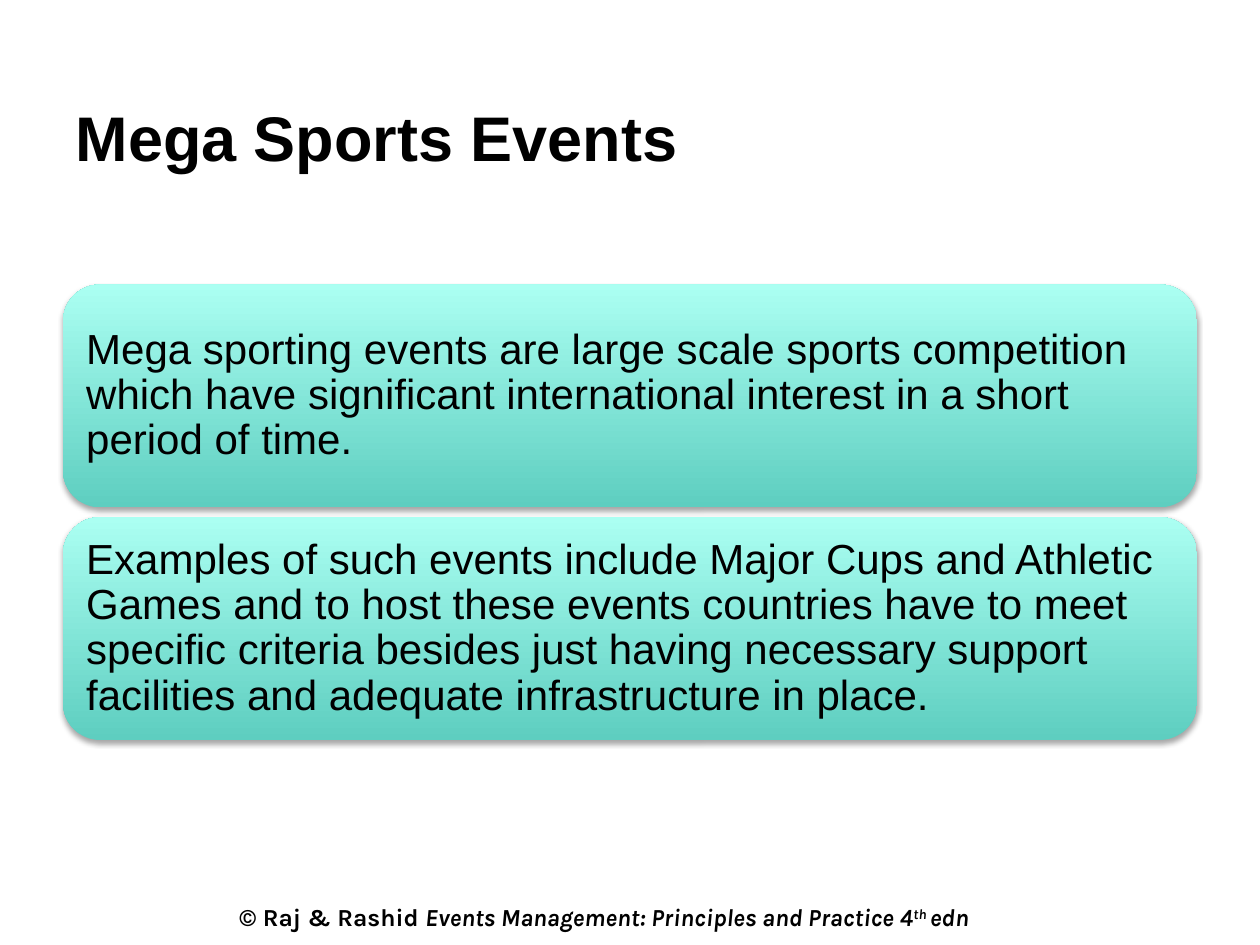
from dataclasses import dataclass

from lxml import etree
from pptx import Presentation
from pptx import util as u
from pptx.dml.color import RGBColor
from pptx.enum import shapes, text
from pptx.oxml.ns import qn

BLACK = RGBColor(0x00, 0x00, 0x00)
TEAL = RGBColor(0x5E, 0xCE, 0xC0)
PALE_TEAL = RGBColor(0xAB, 0xFF, 0xF2)

MARGIN = u.Pt(36)
CONTENT_WIDTH = u.Pt(648)
CARD_TOP = u.Pt(162.6)
CARD_HEIGHT = u.Pt(127.4)
CARD_PITCH = u.Pt(132.9)


@dataclass
class Span:
    words: str
    size: float
    font: str = "Arial"
    bold: bool = False
    italic: bool = False
    superscript: bool = False


def add_span(para, span: Span) -> None:
    run = para.add_run()
    run.text = span.words
    font = run.font
    font.name, font.size = span.font, u.Pt(span.size)
    font.bold, font.italic = span.bold, span.italic
    font.color.rgb = BLACK
    if span.superscript:
        run._r.get_or_add_rPr().set("baseline", "30000")


def add_soft_shadow(shape) -> None:
    shape.shadow.inherit = False
    effects = shape._element.spPr.find(qn("a:effectLst"))
    shadow = etree.SubElement(
        effects, qn("a:outerShdw"), blurRad=str(u.Pt(3.1)), dist=str(u.Pt(1.8)),
        dir="5400000", rotWithShape="0")
    color = etree.SubElement(shadow, qn("a:srgbClr"), val=str(BLACK))
    etree.SubElement(color, qn("a:alpha"), val="35000")


def add_card(page, top: int, words: str) -> None:
    card = page.shapes.add_shape(
        shapes.MSO_SHAPE.ROUNDED_RECTANGLE, MARGIN, top, CONTENT_WIDTH, CARD_HEIGHT)
    card.fill.gradient()
    card.fill.gradient_angle = 90
    for stop, color in zip(card.fill.gradient_stops, (TEAL, PALE_TEAL)):
        stop.color.rgb = color
    card.line.fill.background()
    add_soft_shadow(card)
    frame = card.text_frame
    frame.word_wrap = True
    frame.vertical_anchor = text.MSO_ANCHOR.MIDDLE
    frame.margin_left = frame.margin_right = u.Pt(7.2)
    frame.margin_top = frame.margin_bottom = u.Pt(7.2)
    para = frame.paragraphs[0]
    para.alignment = text.PP_ALIGN.LEFT
    para.line_spacing = 0.9
    add_span(para, Span(words, 24))


CARDS = [
    "Mega sporting events are large scale sports competition which have "
    "significant international interest in a short period of time.",
    "Examples of such events include Major Cups and Athletic Games and to host "
    "these events countries have to meet specific criteria besides just having "
    "necessary support facilities and adequate infrastructure in place.",
]

FOOTER = [
    Span("© Raj & Rashid ", 14, "Karla", bold=True),
    Span("Events Management: Principles and Practice 4", 14, "Karla", True, True),
    Span("th ", 14, "Karla", True, True, superscript=True),
    Span("edn", 14, "Karla", True, True),
]


def main() -> None:
    deck = Presentation()
    deck.slide_width, deck.slide_height = u.Pt(720), u.Pt(540)
    page = deck.slides.add_slide(deck.slide_layouts[5])

    # Title
    title = page.shapes.title
    title.left, title.top = MARGIN, u.Pt(52.6)
    title.width, title.height = CONTENT_WIDTH, u.Pt(75.6)
    title.text_frame.vertical_anchor = text.MSO_ANCHOR.TOP
    heading = title.text_frame.paragraphs[0]
    heading.alignment = text.PP_ALIGN.LEFT
    add_span(heading, Span("Mega Sports Events", 36, bold=True))

    # Stacked cards
    for index, words in enumerate(CARDS):
        add_card(page, CARD_TOP + index * CARD_PITCH, words)

    # Copyright line
    footer = page.shapes.add_textbox(u.Pt(129.6), u.Pt(512), u.Pt(502), u.Pt(24.5))
    footer.text_frame.word_wrap = True
    for span in FOOTER:
        add_span(footer.text_frame.paragraphs[0], span)

    deck.save("out.pptx")


if __name__ == "__main__":
    main()
